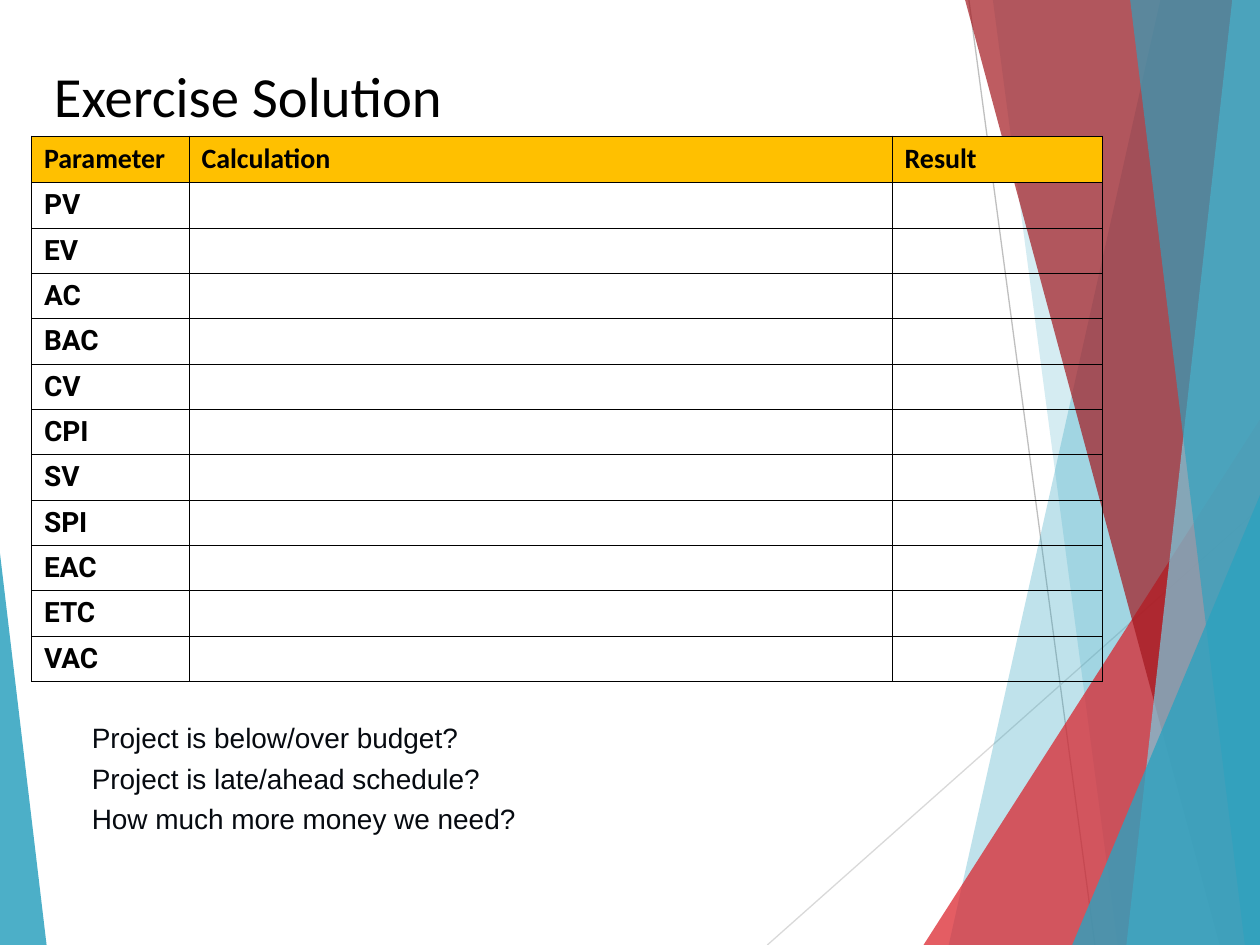
"""Build the exercise solution slide with its earned value table and ribbon backdrop."""
import pptx
import pptx.dml.color
import pptx.enum.shapes
import pptx.enum.text
import pptx.oxml
import pptx.oxml.ns
import pptx.util

WIDTH, HEIGHT = 10, 7.5
COLORS = {
    "black": "000000", "ink": "060A10", "amber": "FFC000", "teal": "2DA2BF",
    "aqua": "7ACBE0", "red": "DA1F28", "crimson": "A3171E",
    "gray": "BFBFBF", "silver": "D9D9D9",
}
TITLE = "Exercise Solution"
HEADERS = ["Parameter", "Calculation", "Result"]
PARAMETERS = ["PV", "EV", "AC", "BAC", "CV", "CPI", "SV", "SPI", "EAC", "ETC", "VAC"]
QUESTIONS = ["Project is below/over budget?", "Project is late/ahead schedule?",
             "How much more money we need?"]
COLUMN_WIDTHS = [1.25, 5.58, 1.67]
HEADER_HEIGHT, ROW_HEIGHT = 0.37, 0.36
HAIRLINES = [((7.69, 0), (8.69, HEIGHT), "gray"), ((WIDTH, 4.03), (6.09, HEIGHT), "silver")]
# name of kind, geometry, colour, opacity
BACKDROP = [
    ("ribbon", (9.21, 7.53), "teal", 30),
    ("ribbon", (7.88, 8.87), "teal", 20),
    ("triangle", (7.33, 3.33, 2.67, 1), "red", 72),
    ("ribbon", (7.66, 9.68), "crimson", 70),
    ("ribbon", (9.78, 8.94), "aqua", 70),
    ("ribbon", (8.97, 9.88), "teal", 65),
    ("triangle", (8.51, 3.93, 1.49, 1), "teal", 80),
    ("triangle", (0, 4.39, 0.37, 0), "teal", 85),
]


def inches(*values):
    return [pptx.util.Inches(value) for value in values]


def color(name):
    return pptx.dml.color.RGBColor.from_string(COLORS[name])


def add_element(parent, tag, **attributes):
    element = pptx.oxml.parse_xml(f"<{tag} {pptx.oxml.ns.nsdecls('a')}/>")
    for name, value in attributes.items():
        element.set(name, str(value))
    parent.append(element)
    return element


def write(frame, lines, size=16, font="Calibri", ink="black", bold=False, indent=0, before=0):
    frame.word_wrap = True
    for index, line in enumerate(lines):
        paragraph = frame.add_paragraph() if index else frame.paragraphs[0]
        paragraph.space_before = pptx.util.Pt(before)
        if indent:
            properties = paragraph._p.get_or_add_pPr()
            properties.set("marL", str(pptx.util.Inches(indent)))
            properties.set("indent", "0")
        run = paragraph.add_run()
        run.text = line
        run.font.size, run.font.name, run.font.bold = pptx.util.Pt(size), font, bold
        run.font.color.rgb = color(ink)


def add_hairline(slide, start, end, name):
    line = slide.shapes.add_connector(
        pptx.enum.shapes.MSO_CONNECTOR.STRAIGHT, *inches(*start, *end))
    line.line.color.rgb = color(name)
    line.line.width = pptx.util.Pt(0.75)
    add_element(line._element.spPr, "a:effectLst")


def add_backdrop(slide, kind, geometry, name, opacity):
    if kind == "ribbon":
        top, bottom = geometry
        builder = slide.shapes.build_freeform(*inches(top, 0), scale=1.0)
        corners = [(WIDTH, 0), (WIDTH, HEIGHT), (bottom, HEIGHT)]
        builder.add_line_segments([inches(*corner) for corner in corners], close=True)
        shape = builder.convert_to_shape()
    else:
        left, top, width, apex = geometry
        shape = slide.shapes.add_shape(
            pptx.enum.shapes.MSO_SHAPE.ISOSCELES_TRIANGLE,
            *inches(left, top, width, HEIGHT - top))
        shape.adjustments[0] = apex
    shape.shadow.inherit = False
    shape.line.fill.background()
    shape.fill.solid()
    shape.fill.fore_color.rgb = color(name)
    fill = shape._element.spPr.find(pptx.oxml.ns.qn("a:solidFill"))
    add_element(fill[0], "a:alpha", val=opacity * 1000)


def format_cell(cell, text, header, font):
    cell.margin_top = cell.margin_bottom = 0
    cell.vertical_anchor = pptx.enum.text.MSO_ANCHOR.MIDDLE
    properties = cell._tc.get_or_add_tcPr()
    for side in ("L", "R", "T", "B"):
        border = add_element(properties, f"a:ln{side}", w=pptx.util.Pt(0.5))
        add_element(add_element(border, "a:solidFill"), "a:srgbClr", val=COLORS["black"])
    if header:
        cell.fill.solid()
        cell.fill.fore_color.rgb = color("amber")
    else:
        cell.fill.background()
    if text:
        write(cell.text_frame, [text], font=font, bold=True)


def add_parameter_table(slide):
    rows = [HEADERS] + [[parameter, "", ""] for parameter in PARAMETERS]
    heights = [HEADER_HEIGHT] + [ROW_HEIGHT] * len(PARAMETERS)
    table = slide.shapes.add_table(
        len(rows), len(HEADERS),
        *inches(0.25, 1.08, sum(COLUMN_WIDTHS), sum(heights))).table
    table.first_row = table.horz_banding = False
    for column, width in zip(table.columns, COLUMN_WIDTHS):
        column.width = pptx.util.Inches(width)
    for index, (row, height) in enumerate(zip(rows, heights)):
        table.rows[index].height = pptx.util.Inches(height)
        for cell, text in zip(table.rows[index].cells, row):
            format_cell(cell, text, index == 0, "Roboto" if index else "Calibri")


def main():
    presentation = pptx.Presentation()
    presentation.slide_width, presentation.slide_height = inches(WIDTH, HEIGHT)
    slide = presentation.slides.add_slide(presentation.slide_layouts[6])
    for hairline in HAIRLINES:
        add_hairline(slide, *hairline)
    for piece in BACKDROP:
        add_backdrop(slide, *piece)
    title = slide.shapes.add_textbox(*inches(0.33, 0.43, 8.33, 0.42))
    write(title.text_frame, [TITLE], size=32.4)
    add_parameter_table(slide)
    questions = slide.shapes.add_textbox(*inches(0.25, 5.67, 8.75, 1.42))
    write(questions.text_frame, QUESTIONS, font="Arial", ink="ink", indent=0.38, before=4)
    presentation.save("out.pptx")


if __name__ == "__main__":
    main()
